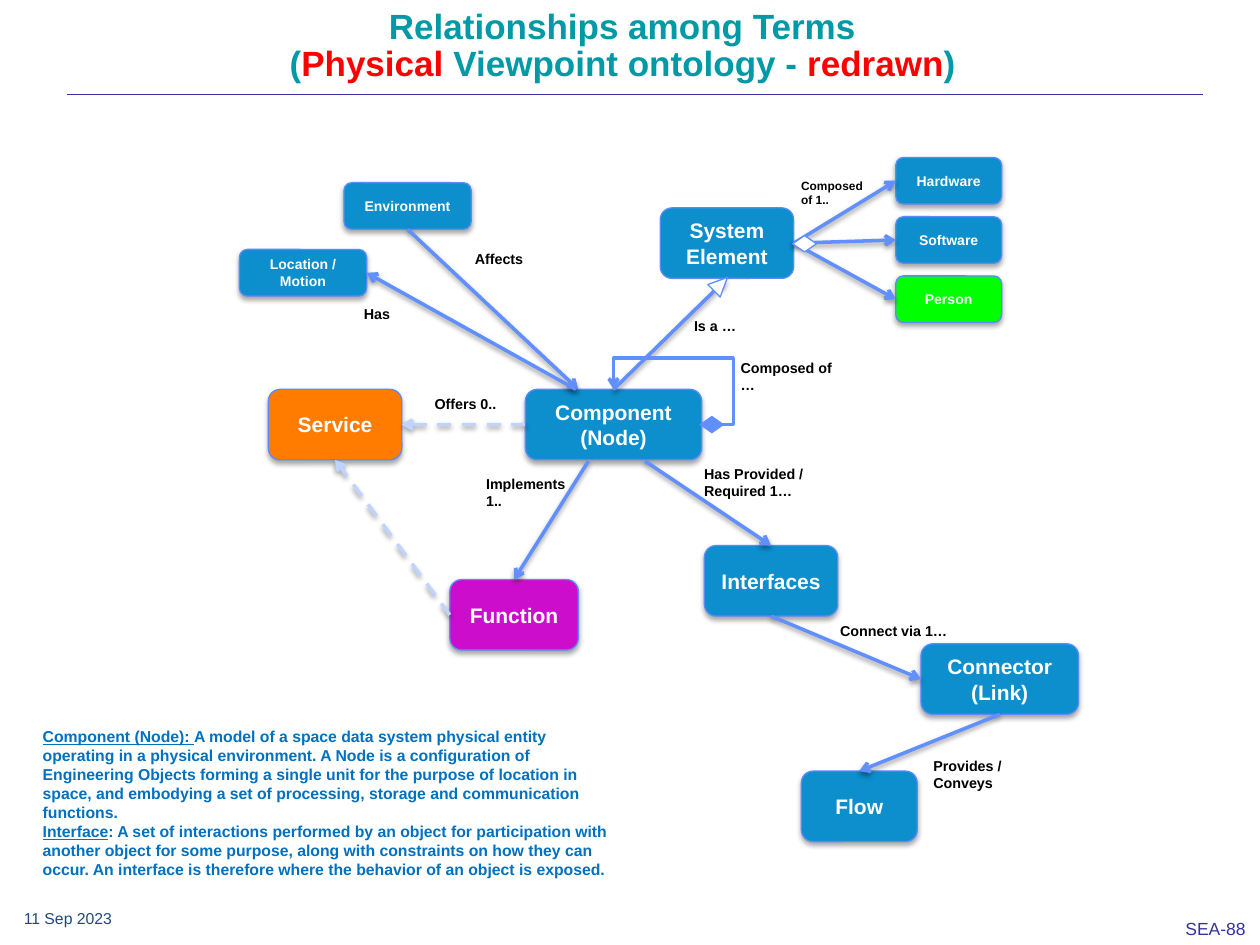
from lxml.etree import SubElement
from pptx import Presentation
from pptx.dml.color import RGBColor
from pptx.enum.dml import MSO_LINE as Dash
from pptx.enum.shapes import MSO_CONNECTOR as Wire, MSO_SHAPE as Form
from pptx.enum.text import MSO_ANCHOR as Anchor, MSO_AUTO_SIZE as Fit, PP_ALIGN as Align
from pptx.oxml.ns import qn
from pptx.util import Inches, Pt

BLUE = RGBColor(0x0C, 0x8F, 0xCC)
ORANGE = RGBColor(0xFF, 0x7C, 0x00)
PURPLE = RGBColor(0xCC, 0x0E, 0xCC)
GREEN = RGBColor(0x00, 0xFF, 0x00)
EDGE = RGBColor(0x5B, 0x8A, 0xFB)
WIRE = RGBColor(0x61, 0x8F, 0xFD)
PALE = RGBColor(0xC0, 0xD2, 0xFE)
TEAL = RGBColor(0x00, 0x99, 0xA6)
RED = RGBColor(0xFF, 0x00, 0x00)
INK = RGBColor(0x00, 0x70, 0xC0)
NAVY = RGBColor(0x33, 0x33, 0x99)
SLATE = RGBColor(0x1F, 0x49, 0x7D)
BLACK = RGBColor(0, 0, 0)
WHITE = RGBColor(0xFF, 0xFF, 0xFF)

TOP, LEFT, BASE, RIGHT = range(4)
CELL = Inches(0.1)
COLS, ROWS = 100, 75


def grid(*cells):
    return [round(n * CELL) for n in cells]


def write(frame, *paras, size=8.2, color=BLACK, bold=True, align=None,
          anchor=Anchor.TOP, wrap=True, space=None):
    frame.word_wrap = wrap
    frame.auto_size = Fit.NONE
    frame.vertical_anchor = anchor
    for i, runs in enumerate(paras):
        para = frame.paragraphs[0] if i == 0 else frame.add_paragraph()
        para.alignment = align
        para.line_spacing = space
        for part in [runs] if isinstance(runs, str) else runs:
            if part == "\n":
                para.add_line_break()
                continue
            words, look = (part, {}) if isinstance(part, str) else part
            run = para.add_run()
            run.text = words
            font = run.font
            font.name, font.size, font.bold = "Arial", Pt(size), bold
            font.color.rgb = look.get("color", color)
            font.underline = look.get("line")


def label(slide, place, *paras, **look):
    box = slide.shapes.add_textbox(*grid(*place))
    write(box.text_frame, *paras, **look)


def shade(item, dist, alpha):
    effects = SubElement(item._element.spPr, qn("a:effectLst"))
    outer = SubElement(effects, qn("a:outerShdw"), blurRad=str(Pt(3.1)),
                       dist=str(Pt(dist)), dir="5400000", rotWithShape="0")
    tint = SubElement(outer, qn("a:srgbClr"), val="000000")
    SubElement(tint, qn("a:alpha"), val=str(alpha * 1000))


def shape(slide, form, place, fill, edge=None):
    item = slide.shapes.add_shape(form, *grid(*place))
    item.fill.solid()
    item.fill.fore_color.rgb = fill
    if edge is None:
        item.line.fill.background()
    else:
        item.line.color.rgb = edge
        item.line.width = Pt(0.75)
    return item


def node(slide, place, *paras, fill=BLUE, size=12, cast=True):
    box = shape(slide, Form.ROUNDED_RECTANGLE, place, fill, EDGE)
    if cast:
        shade(box, 1.8, 35)
    else:
        box.shadow.inherit = False
    write(box.text_frame, *paras, size=size, color=WHITE,
          align=Align.CENTER, anchor=Anchor.MIDDLE)
    return box


def mark(slide, form, place, fill, edge=None, turn=0):
    item = shape(slide, form, place, fill, edge)
    item.shadow.inherit = False
    item.rotation = turn


def spot(end):
    box, side = end
    if isinstance(box, (int, float)):
        return grid(box, side)
    across = {LEFT: 0, RIGHT: box.width}.get(side, box.width // 2)
    down = {TOP: 0, BASE: box.height}.get(side, box.height // 2)
    return box.left + across, box.top + down


def link(slide, start, end, color=WIRE, width=2, dash=False, tip="arrow",
         kind=Wire.STRAIGHT, cast=True):
    wire = slide.shapes.add_connector(kind, *spot(start), *spot(end))
    for join, (box, side) in ((wire.begin_connect, start), (wire.end_connect, end)):
        if not isinstance(box, (int, float)):
            join(box, side)
    wire.line.color.rgb = color
    wire.line.width = Pt(width)
    if dash:
        wire.line.dash_style = Dash.DASH
    if tip:
        SubElement(wire.line._get_or_add_ln(), qn("a:tailEnd"), type=tip)
    if cast:
        shade(wire, 1.6, 38)
    else:
        SubElement(wire._element.spPr, qn("a:effectLst"))
    return wire


def loop(slide, box):
    wire = link(slide, (box, RIGHT), (box, TOP), kind=Wire.ELBOW, cast=False)
    geom = wire._element.spPr.find(qn("a:prstGeom"))
    geom.set("prst", "bentConnector4")
    guides = geom.find(qn("a:avLst"))
    for name, share in (("adj1", -35800), ("adj2", 188900)):
        SubElement(guides, qn("a:gd"), name=name, fmla=f"val {share}")


def head(slide):
    title = slide.shapes.title
    title.left, title.top, title.width, title.height = grid(4.4, 0.2, 90, 8.4)
    write(title.text_frame,
          ["Relationships among Terms", "\n", "(", ("Physical", {"color": RED}),
           " Viewpoint ontology - ", ("redrawn", {"color": RED}), ")"],
          size=20, color=TEAL, align=Align.CENTER, space=0.9)
    link(slide, (5.3, 7.5), (95.5, 7.5), color=NAVY, width=0.13, tip=None, cast=False)


def graph(slide):
    system = node(slide, (52.4, 16.5, 10.6, 5.6), "System", "Element", cast=False)
    core = node(slide, (41.7, 30.9, 14, 5.6), "Component", "(Node)")
    face = node(slide, (55.9, 43.3, 10.6, 5.6), "Interfaces")
    task = node(slide, (35.7, 46, 10.2, 5.6), "Function", fill=PURPLE)
    service = node(slide, (21.3, 30.9, 10.6, 5.6), "Service", fill=ORANGE)
    joint = node(slide, (73.1, 51.1, 12.5, 5.6), "Connector", "(Link)")
    flow = node(slide, (63.6, 61.2, 9.2, 5.6), "Flow")
    around = node(slide, (27.3, 14.5, 10.1, 3.7), "Environment", size=8)
    place = node(slide, (19, 19.8, 10.1, 3.7), "Location / Motion", size=8)

    parts = (("Hardware", BLUE), ("Software", BLUE), ("Person", GREEN))
    for i, (name, fill) in enumerate(parts):
        part = node(slide, (71.1, 12.5 + 4.7 * i, 8.4, 3.7), name, fill=fill, size=8)
        link(slide, (system, RIGHT), (part, LEFT))

    link(slide, (46.7, 36.6), (task, TOP))
    link(slide, (51.2, 36.6), (face, TOP))
    link(slide, (core, TOP), (system, BASE), tip="triangle")
    link(slide, (around, BASE), (45.9, 30.9))
    link(slide, (45.7, 30.9), (place, RIGHT))
    link(slide, (face, BASE), (joint, LEFT))
    link(slide, (joint, BASE), (flow, TOP))
    for start in ((core, LEFT), (task, LEFT)):
        side = RIGHT if start[0] is core else BASE
        link(slide, start, (service, side), color=PALE, dash=True)
    loop(slide, core)

    mark(slide, Form.FLOWCHART_DECISION, (55.5, 33, 2, 1.4), WIRE)
    mark(slide, Form.FLOWCHART_DECISION, (62.9, 18.7, 1.9, 1.3), WHITE, WIRE)
    mark(slide, Form.ISOSCELES_TRIANGLE, (56.5, 21.8, 1.4, 1.5), WHITE, WIRE, 45.3)


def notes(slide):
    for words, spot_at in (
        ("Implements 1..", (37.6, 37.2, 8.4, 3.8)),
        ("Is a …", (54.1, 24.7, 9.5, 2.4)),
        ("Offers 0..", (33.5, 30.9, 7.5, 2.4)),
        ("Has Provided / Required 1…", (54.9, 36.4, 12.7, 3.8)),
        ("Affects", (36.7, 19.4, 6.1, 2.1)),
        ("Connect via 1…", (65.7, 48.9, 12.5, 2.4)),
        ("Composed of …", (57.8, 28, 9.5, 3.8)),
        ("Has", (27.9, 23.7, 6.1, 2.4)),
        ("Provides / Conveys", (73.1, 59.6, 8.6, 3.8)),
    ):
        label(slide, spot_at, words)
    label(slide, (62.6, 13.7, 7, 3.3), "Composed of 1..", size=6.8)
    label(slide, (2.4, 57.2, 47.8, 13.1),
          [("Component (Node): ", {"line": True}),
           "A model of a space data system physical entity operating in a physical "
           "environment. A Node is a configuration of Engineering Objects forming a "
           "single unit for the purpose of location in space, and embodying a set of "
           "processing, storage and communication functions."],
          [("Interface", {"line": True}),
           ": A set of interactions performed by an object for participation with "
           "another object for some purpose, along with constraints on how they can "
           "occur. An interface is therefore where the behavior of an object is exposed."],
          size=9, color=INK)
    label(slide, (0.9, 71.5, 8.1, 2.8), "11 Sep 2023", size=9, color=SLATE,
          bold=False, anchor=Anchor.MIDDLE, wrap=False)
    label(slide, (93.1, 72.4, 6.8, 2.6), "SEA-88", size=10, color=NAVY,
          bold=False, wrap=False)


def main():
    deck = Presentation()
    deck.slide_width, deck.slide_height = grid(COLS, ROWS)
    slide = deck.slides.add_slide(deck.slide_layouts[5])
    head(slide)
    graph(slide)
    notes(slide)
    deck.save("out.pptx")


if __name__ == "__main__":
    main()
